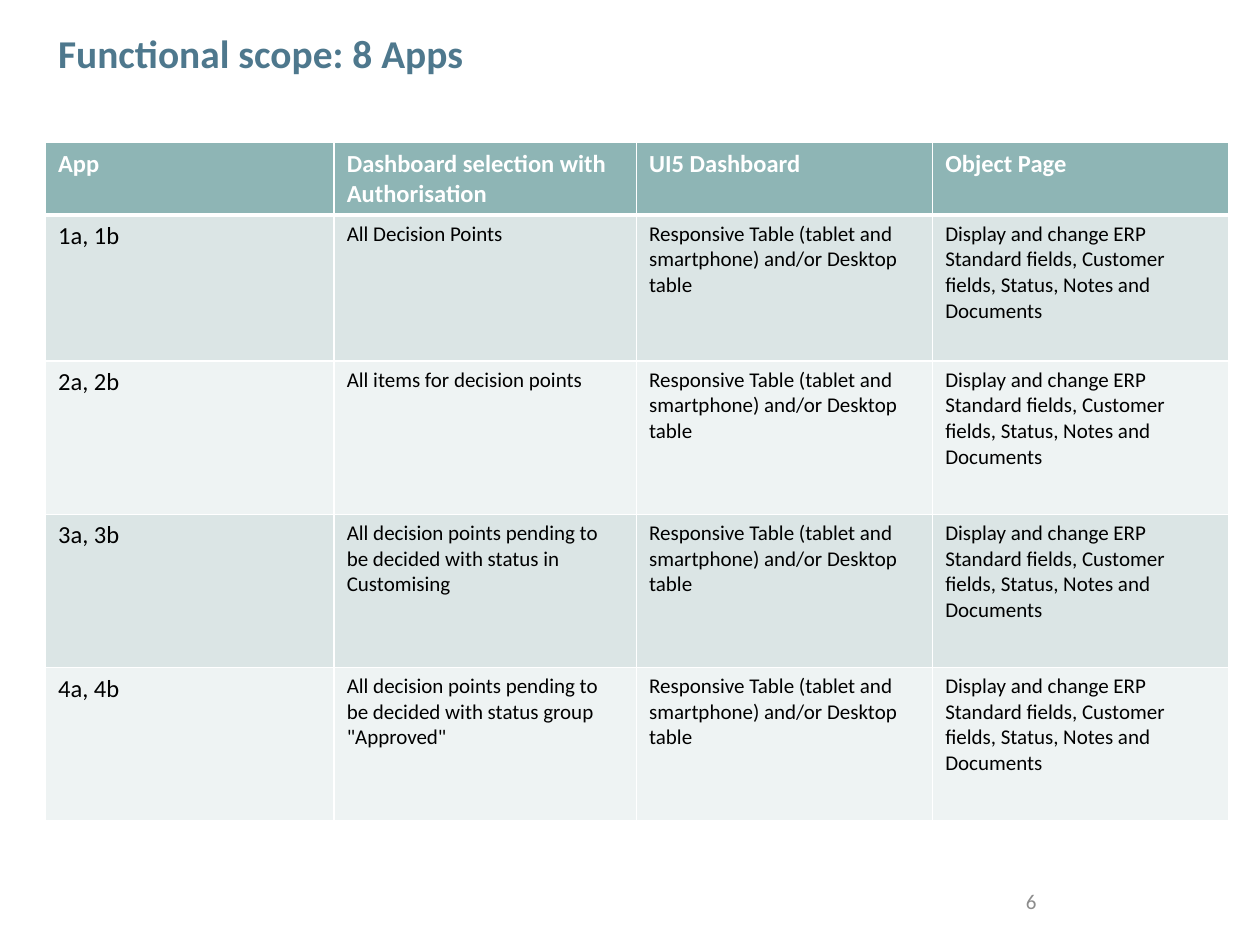
from lxml.etree import SubElement
from pptx import Presentation
from pptx.dml.color import RGBColor
from pptx.enum.text import MSO_ANCHOR, PP_ALIGN
from pptx.oxml.ns import qn
from pptx.util import Pt

TITLE = "Functional scope: 8 Apps"
PAGE_NUMBER = "6"
HEADERS = ["App", "Dashboard selection with Authorisation", "UI5 Dashboard", "Object Page"]
DASHBOARD = "Responsive Table (tablet and smartphone) and/or Desktop table"
OBJECT_PAGE = ("Display and change ERP Standard fields, Customer fields, "
               "Status, Notes and Documents")
APPS = [
    ("1a, 1b", "All Decision Points"),
    ("2a, 2b", "All items for decision points"),
    ("3a, 3b", "All decision points pending to be decided with status in Customising"),
    ("4a, 4b", 'All decision points pending to be decided with status group "Approved"'),
]
COLORS = {"title": "4E788D", "header": "8EB5B5", "odd": "DBE5E5", "even": "EEF3F3",
          "white": "FFFFFF", "text": "000000", "number": "8C8C8C"}
FONT = "Calibri"
COLUMN_WIDTHS = [165, 172.8, 169.2, 169.2]
ROW_HEIGHTS = [41.4, 83.4, 87.6, 87.6, 87.6]
TABLE_LEFT, TABLE_TOP = 26, 81.5


def add_run(paragraph, text, size, color, bold=False):
    run = paragraph.add_run()
    run.text = text
    run.font.name = FONT
    run.font.size = Pt(size)
    run.font.bold = bold
    run.font.color.rgb = RGBColor.from_string(COLORS[color])


def set_borders(cell, top, bottom):
    """Draw white borders; call before the cell fill is set, as XML order matters."""
    properties = cell._tc.get_or_add_tcPr()
    for side, width in (("L", 1), ("R", 1), ("T", top), ("B", bottom)):
        line = SubElement(properties, qn(f"a:ln{side}"), w=str(Pt(width)))
        fill = SubElement(line, qn("a:solidFill"))
        SubElement(fill, qn("a:srgbClr"), val=COLORS["white"])


def add_title(slide):
    title = slide.shapes.title
    title.left, title.top, title.width, title.height = Pt(26), Pt(18), Pt(334), Pt(28)
    title.text_frame.vertical_anchor = MSO_ANCHOR.MIDDLE
    paragraph = title.text_frame.paragraphs[0]
    paragraph.alignment = PP_ALIGN.LEFT
    paragraph.line_spacing = 0.9
    add_run(paragraph, TITLE, 22.5, "title", bold=True)


def add_scope_table(slide):
    rows = [HEADERS] + [[app, selection, DASHBOARD, OBJECT_PAGE] for app, selection in APPS]
    table = slide.shapes.add_table(
        len(rows), len(HEADERS), Pt(TABLE_LEFT), Pt(TABLE_TOP),
        Pt(sum(COLUMN_WIDTHS)), Pt(sum(ROW_HEIGHTS))).table
    for column, width in zip(table.columns, COLUMN_WIDTHS):
        column.width = Pt(width)
    for row_index, texts in enumerate(rows):
        table.rows[row_index].height = Pt(ROW_HEIGHTS[row_index])
        is_header = row_index == 0
        fill = "header" if is_header else "odd" if row_index % 2 else "even"
        for column_index, text in enumerate(texts):
            cell = table.cell(row_index, column_index)
            set_borders(cell, top=3 if row_index == 1 else 1, bottom=3 if is_header else 1)
            cell.fill.solid()
            cell.fill.fore_color.rgb = RGBColor.from_string(COLORS[fill])
            size = 14 if is_header or column_index == 0 else 12
            add_run(cell.text_frame.paragraphs[0], text, size,
                    "white" if is_header else "text", bold=is_header)


def add_page_number(slide):
    box = slide.shapes.add_textbox(Pt(508.3), Pt(500.4), Pt(162), Pt(28.8))
    box.text_frame.word_wrap = True
    box.text_frame.vertical_anchor = MSO_ANCHOR.MIDDLE
    paragraph = box.text_frame.paragraphs[0]
    paragraph.alignment = PP_ALIGN.CENTER
    add_run(paragraph, PAGE_NUMBER, 12, "number")


def main():
    presentation = Presentation()
    presentation.slide_width, presentation.slide_height = Pt(720), Pt(540)
    slide = presentation.slides.add_slide(presentation.slide_layouts[5])
    add_title(slide)
    add_scope_table(slide)
    add_page_number(slide)
    presentation.save("out.pptx")


if __name__ == "__main__":
    main()
